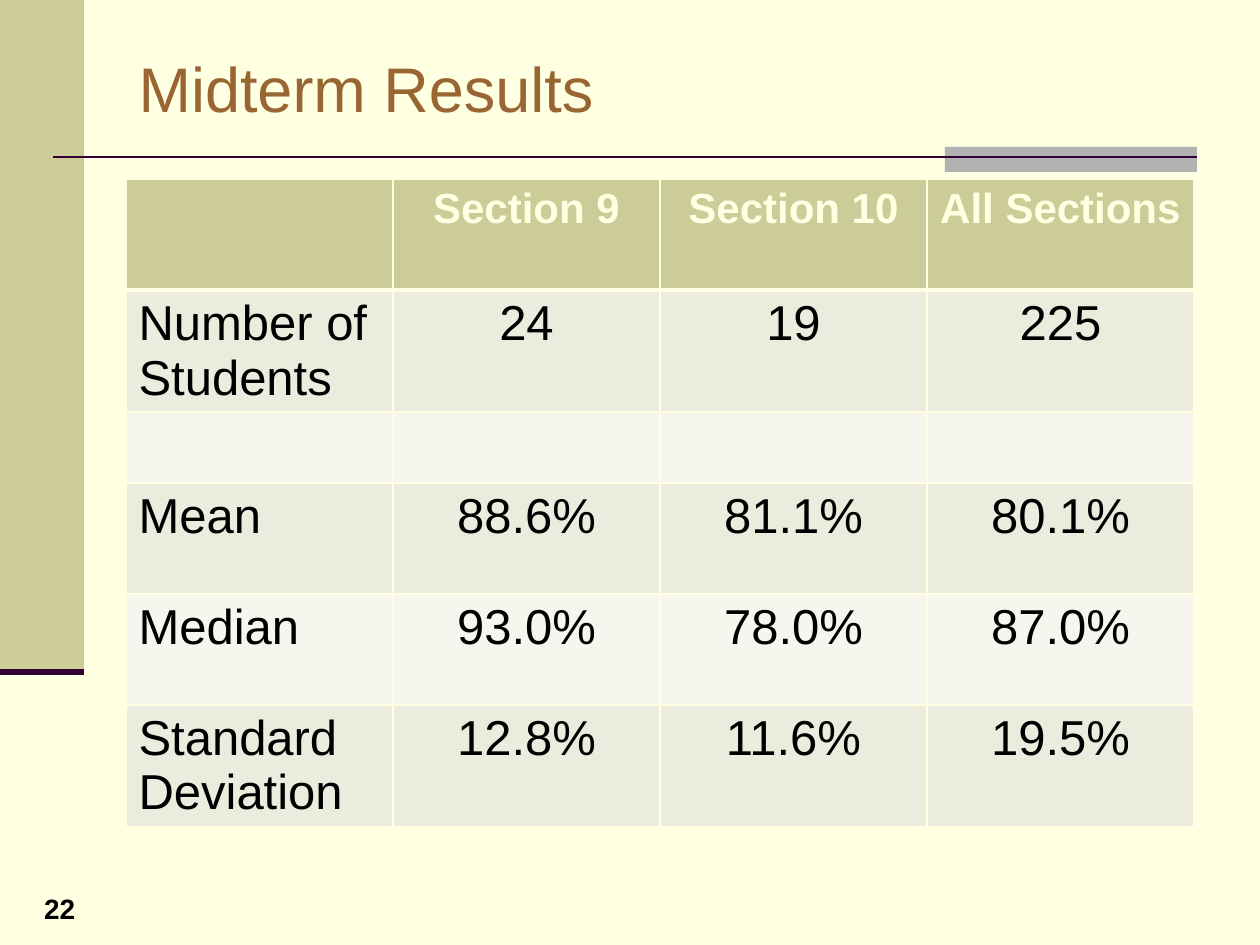
import pptx
import pptx.util
import pptx.dml.color
import pptx.enum.shapes
import pptx.enum.text
import pptx.oxml
import pptx.oxml.ns
import lxml.etree

# Content
TITLE = "Midterm Results"
PAGE = "22"
HEAD = ["", "Section 9", "Section 10", "All Sections"]
ROWS = [
    ["Number of Students", "24", "19", "225"],
    ["", "", "", ""],
    ["Mean", "88.6%", "81.1%", "80.1%"],
    ["Median", "93.0%", "78.0%", "87.0%"],
    ["Standard Deviation", "12.8%", "11.6%", "19.5%"],
]

# Look
THEME = {
    "font": "Arial", "back": "FFFFE1", "side": "CCCC99", "block": "B2B2B2",
    "rule": "330033", "title": "996633", "text": "000000",
    "bands": ["ECECDE", "F6F6EF"],
    "title_pt": 36, "head_pt": 24, "body_pt": 28, "page_pt": 16,
}

# Layout, in px
SLIDE = (1260, 945)
SIDE = (0, 0, 84, 672)
BLOCK = (945, 147, 252, 25)
RULES = [((53, 157), (1197, 157), 1.5), ((0, 672), (84, 672), 3.5)]
TITLE_BOX = (126, 38, 1071, 98)
PAGE_BOX = (19, 885, 81, 42)
ORIGIN = (126, 179)
COL, ROW, GAP = 267, 111, 71

ALIGN = pptx.enum.text.PP_ALIGN
MIDDLE = pptx.enum.text.MSO_ANCHOR.MIDDLE


def px(n):
    return pptx.util.Emu(round(n * 914400 / 126))


def box(part):
    return [px(n) for n in part]


def rgb(code):
    return pptx.dml.color.RGBColor.from_string(code)


def write(frame, text, size, color=THEME["text"], bold=False, align=ALIGN.LEFT):
    frame.word_wrap = True
    para = frame.paragraphs[0]
    para.alignment = align
    run = para.add_run()
    run.text = text
    font = run.font
    font.name, font.size, font.bold = THEME["font"], pptx.util.Pt(size), bold
    font.color.rgb = rgb(color)


def block(slide, part, color):
    shape = slide.shapes.add_shape(
        pptx.enum.shapes.MSO_SHAPE.RECTANGLE, *box(part))
    shape.shadow.inherit = False
    shape.fill.solid()
    shape.fill.fore_color.rgb = rgb(color)
    shape.line.fill.background()


def rule(slide, start, end, width):
    line = slide.shapes.add_connector(
        pptx.enum.shapes.MSO_CONNECTOR.STRAIGHT, *box(start + end))
    line.line.color.rgb = rgb(THEME["rule"])
    line.line.width = pptx.util.Pt(width)
    props = line._element.spPr
    lxml.etree.SubElement(props, pptx.oxml.ns.qn("a:effectLst"))


def style(cell, fill, top=1, bottom=1):
    props = cell._tc.get_or_add_tcPr()
    for side, width in zip("LRTB", (1, 1, top, bottom)):
        props.append(pptx.oxml.parse_xml(
            f'<a:ln{side} {pptx.oxml.ns.nsdecls("a")} w="{width * 12700}">'
            f'<a:solidFill><a:srgbClr val="{THEME["back"]}"/></a:solidFill>'
            f'</a:ln{side}>'))
    cell.fill.solid()
    cell.fill.fore_color.rgb = rgb(fill)


def grid(slide):
    data = [HEAD] + ROWS
    tall = [ROW if any(row) else GAP for row in data]
    size = (COL * len(HEAD), sum(tall))
    table = slide.shapes.add_table(
        len(data), len(HEAD), *box(ORIGIN + size)).table
    for col in table.columns:
        col.width = px(COL)
    for r, row in enumerate(data):
        table.rows[r].height = px(tall[r])
        for c, text in enumerate(row):
            cell = table.cell(r, c)
            if r == 0:
                style(cell, THEME["side"], bottom=3)
                look = {"size": THEME["head_pt"], "color": THEME["back"],
                        "bold": True}
            else:
                style(cell, THEME["bands"][(r - 1) % 2], top=3 if r == 1 else 1)
                look = {"size": THEME["body_pt"]}
            if text:
                write(cell.text_frame, text,
                      align=ALIGN.CENTER if c else ALIGN.LEFT, **look)


def main():
    deck = pptx.Presentation()
    deck.slide_width, deck.slide_height = box(SLIDE)
    slide = deck.slides.add_slide(deck.slide_layouts[5])
    slide.background.fill.solid()
    slide.background.fill.fore_color.rgb = rgb(THEME["back"])

    # Side band, corner block and rules
    block(slide, SIDE, THEME["side"])
    block(slide, BLOCK, THEME["block"])
    for start, end, width in RULES:
        rule(slide, start, end, width)

    # Title
    title = slide.shapes.title
    title.left, title.top, title.width, title.height = box(TITLE_BOX)
    title.text_frame.vertical_anchor = MIDDLE
    write(title.text_frame, TITLE, THEME["title_pt"], color=THEME["title"])

    # Results and page number
    grid(slide)
    page = slide.shapes.add_textbox(*box(PAGE_BOX))
    write(page.text_frame, PAGE, THEME["page_pt"], bold=True,
          align=ALIGN.CENTER)

    deck.save("out.pptx")


if __name__ == "__main__":
    main()
